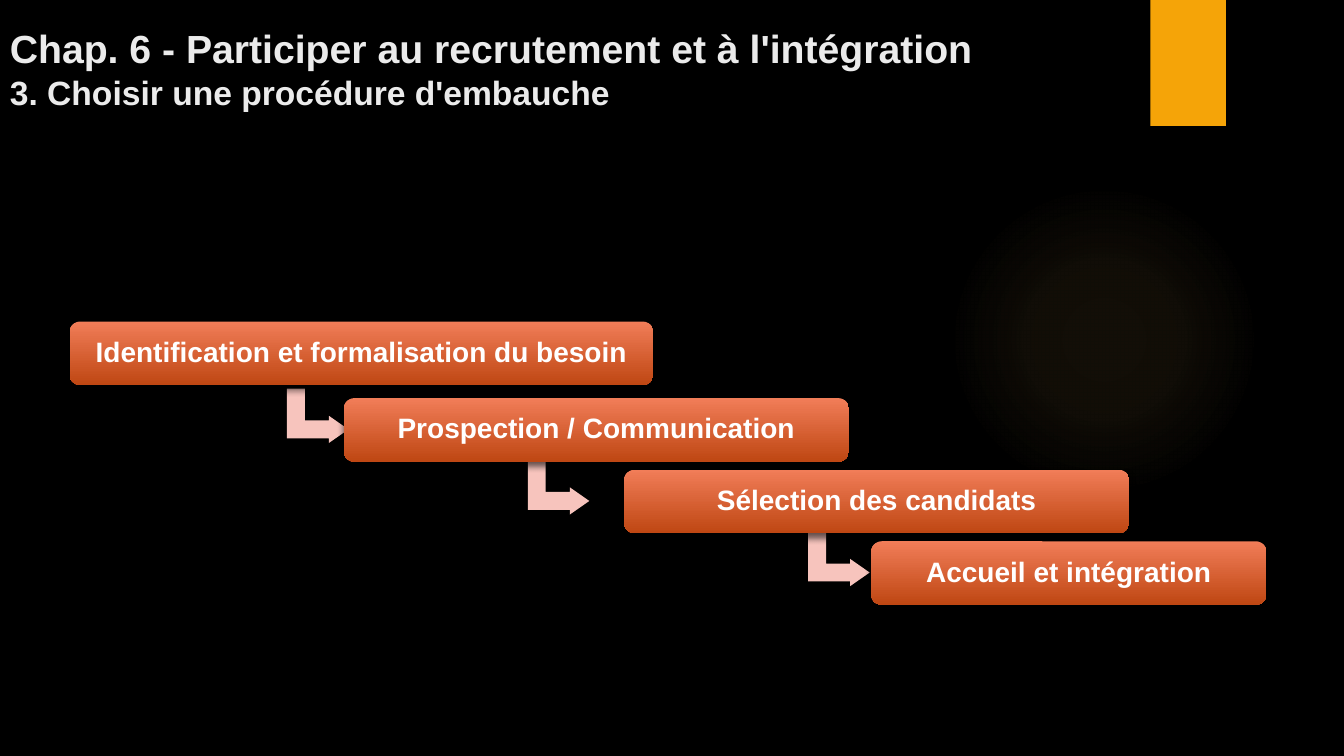
"""Build the slide on the four steps of a hiring procedure."""
from lxml.etree import SubElement
from pptx import Presentation
from pptx.dml.color import RGBColor
from pptx.enum.shapes import MSO_SHAPE
from pptx.enum.text import MSO_ANCHOR, PP_ALIGN
from pptx.oxml import parse_xml
from pptx.oxml.ns import nsdecls, qn
from pptx.util import Inches, Pt

TITLE = "Chap. 6 - Participer au recrutement et à l'intégration "
SUBTITLE = "3. Choisir une procédure d'embauche"
STEPS = [
    ("Identification et formalisation du besoin", (0.69, 3.19, 5.79)),
    ("Prospection / Communication", (3.41, 3.95, 5.01)),
    ("Sélection des candidats", (6.19, 4.66, 5.01)),
    ("Accueil et intégration", (8.64, 5.37, 3.92)),
]
ARROWS = [(2.88, 3.82), (5.27, 4.53), (8.05, 5.24)]
STEP_HEIGHT = 0.63
STEP_INSET = 0.11
ARROW_SIZE = (0.54, 0.61)
ARROW_ADJUSTMENTS = (0.328, 0.25, 0.358)

THEME = {
    "font": "Arial",
    "background": "000000",
    "title": "EBEBEB",
    "step_text": "FFFFFF",
    "accent": "F5A408",
    "arrow": "F7C4BD",
    "step_stops": [(0, "F17D58", 100), (100, "BF4713", 100)],
    "glow_stops": [(0, "FAC96A", 7), (36, "FAC96A", 6), (69, "FAC96A", 0)],
    "title_size": 28,
    "subtitle_size": 24,
    "step_size": 20,
}
DOWNWARD = '<a:lin ang="5400000" scaled="0"/>'
RADIAL = ('<a:path path="circle"><a:fillToRect l="50000" t="50000" '
          'r="50000" b="50000"/></a:path>')


def add_plain_shape(slide, kind, left, top, width, height):
    shape = slide.shapes.add_shape(
        kind, Inches(left), Inches(top), Inches(width), Inches(height))
    shape.shadow.inherit = False
    shape.line.fill.background()
    return shape


def fill_solid(shape, color):
    shape.fill.solid()
    shape.fill.fore_color.rgb = RGBColor.from_string(color)


def fill_gradient(shape, stops, direction):
    shape.fill.gradient()
    properties = shape._element.spPr
    stop_xml = "".join(
        f'<a:gs pos="{position * 1000}"><a:srgbClr val="{color}">'
        f'<a:alpha val="{opacity * 1000}"/></a:srgbClr></a:gs>'
        for position, color, opacity in stops)
    gradient = parse_xml(
        f'<a:gradFill {nsdecls("a")} rotWithShape="1">'
        f'<a:gsLst>{stop_xml}</a:gsLst>{direction}</a:gradFill>')
    properties.replace(properties.find(qn("a:gradFill")), gradient)


def add_shadow(shape, opacity, blur, distance):
    effects = shape._element.spPr.find(qn("a:effectLst"))
    shadow = SubElement(
        effects, qn("a:outerShdw"), blurRad=str(Pt(blur)),
        dist=str(Pt(distance)), dir="5400000", algn="ctr", rotWithShape="0")
    color = SubElement(shadow, qn("a:srgbClr"), val="000000")
    SubElement(color, qn("a:alpha"), val=str(opacity * 1000))


def add_run(paragraph, text, size, color):
    run = paragraph.add_run()
    run.text = text
    run.font.name = THEME["font"]
    run.font.size = Pt(size)
    run.font.bold = True
    run.font.color.rgb = RGBColor.from_string(color)


def add_title(slide):
    box = slide.shapes.add_textbox(0, 0, Inches(11.23), Inches(1.16))
    frame = box.text_frame
    frame.word_wrap = True
    frame.vertical_anchor = MSO_ANCHOR.BOTTOM
    paragraph = frame.paragraphs[0]
    add_run(paragraph, TITLE, THEME["title_size"], THEME["title"])
    paragraph.add_line_break()
    add_run(paragraph, SUBTITLE, THEME["subtitle_size"], THEME["title"])


def add_arrow(slide, left, top):
    arrow = add_plain_shape(
        slide, MSO_SHAPE.BENT_UP_ARROW, left, top, *ARROW_SIZE)
    arrow.rotation = 90
    for index, value in enumerate(ARROW_ADJUSTMENTS):
        arrow.adjustments[index] = value
    fill_solid(arrow, THEME["arrow"])
    add_shadow(arrow, 60, 5, 3)


def add_step(slide, label, left, top, width):
    step = add_plain_shape(
        slide, MSO_SHAPE.ROUNDED_RECTANGLE, left, top, width, STEP_HEIGHT)
    fill_gradient(step, THEME["step_stops"], DOWNWARD)
    add_shadow(step, 60, 5, 3)
    frame = step.text_frame
    frame.word_wrap = True
    frame.vertical_anchor = MSO_ANCHOR.MIDDLE
    frame.margin_left = frame.margin_right = Inches(STEP_INSET)
    frame.margin_top = frame.margin_bottom = Inches(STEP_INSET)
    paragraph = frame.paragraphs[0]
    paragraph.alignment = PP_ALIGN.CENTER
    paragraph.line_spacing = 0.9
    add_run(paragraph, label, THEME["step_size"], THEME["step_text"])


def main():
    presentation = Presentation()
    presentation.slide_width = Inches(13.33)
    presentation.slide_height = Inches(7.5)
    slide = presentation.slides.add_slide(presentation.slide_layouts[6])
    slide.background.fill.solid()
    slide.background.fill.fore_color.rgb = RGBColor.from_string(
        THEME["background"])

    glow = add_plain_shape(slide, MSO_SHAPE.OVAL, 9.41, 1.83, 3.08, 3.08)
    fill_gradient(glow, THEME["glow_stops"], RADIAL)
    bookmark = add_plain_shape(
        slide, MSO_SHAPE.RECTANGLE, 11.41, 0, 0.75, 1.25)
    fill_solid(bookmark, THEME["accent"])
    add_shadow(bookmark, 45, 3, 2)

    add_title(slide)
    for position in ARROWS:
        add_arrow(slide, *position)
    for label, place in STEPS:
        add_step(slide, label, *place)
    presentation.save("out.pptx")


if __name__ == "__main__":
    main()
